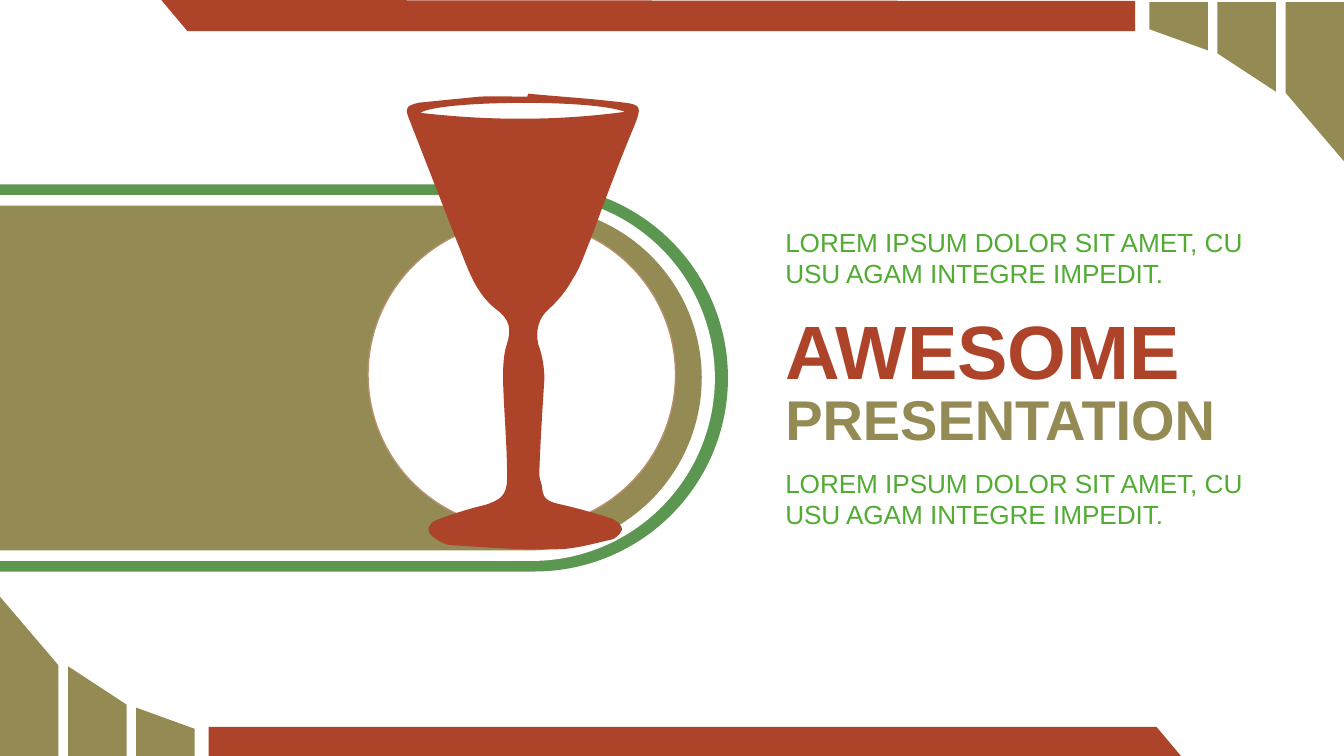
from pptx import Presentation
from pptx.dml.color import RGBColor
from pptx.enum.shapes import MSO_SHAPE as Preset
from pptx.enum.text import MSO_ANCHOR as Anchor, MSO_AUTO_SIZE as AutoSize, PP_ALIGN as Align
from pptx.oxml.ns import qn
from pptx.oxml.xmlchemy import OxmlElement
from pptx.util import Inches, Pt

RED, OLIVE, GREEN, LIME = "AD4329", "948A54", "5C9752", "52AB33"
WHITE, TAN = "FFFFFF", "B7906B"
BLURB = "LOREM IPSUM DOLOR SIT AMET, CU USU AGAM INTEGRE IMPEDIT."
TITLE_ONLY = 5

# Goblet contours: a start point, then two control points and an end point per curve
GOBLET = [
    (5.24, 0.93),
    (5.56, 0.96), (5.88, 0.98), (6.2, 1.02), (6.36, 1.04), (6.36, 1.07), (6.3, 1.23),
    (6.14, 1.61), (6, 1.99), (5.86, 2.37), (5.8, 2.51), (5.76, 2.65), (5.68, 2.77),
    (5.62, 2.88), (5.54, 2.98), (5.44, 3.07), (5.34, 3.16), (5.31, 3.28), (5.34, 3.42),
    (5.38, 3.52), (5.4, 3.65), (5.4, 3.76), (5.38, 4.07), (5.36, 4.38), (5.35, 4.68),
    (5.34, 4.74), (5.38, 4.8), (5.38, 4.86), (5.39, 4.96), (5.46, 4.98), (5.54, 5),
    (5.72, 5.04), (5.9, 5.09), (6.08, 5.15), (6.12, 5.17), (6.17, 5.21), (6.17, 5.25),
    (6.17, 5.28), (6.12, 5.33), (6.08, 5.35), (5.9, 5.39), (5.7, 5.45), (5.52, 5.45),
    (5.17, 5.46), (4.83, 5.43), (4.49, 5.41), (4.43, 5.41), (4.37, 5.38), (4.33, 5.35),
    (4.29, 5.33), (4.25, 5.29), (4.25, 5.25), (4.25, 5.22), (4.29, 5.17), (4.33, 5.16),
    (4.49, 5.1), (4.64, 5.05), (4.81, 5.01), (4.97, 4.96), (5.03, 4.91), (5.03, 4.74),
    (5.03, 4.42), (5, 4.1), (4.99, 3.78), (4.99, 3.67), (4.99, 3.55), (5.02, 3.44),
    (5.08, 3.26), (5.06, 3.17), (4.91, 3.06), (4.7, 2.89), (4.63, 2.63), (4.53, 2.39),
    (4.37, 1.98), (4.21, 1.57), (4.05, 1.16), (4, 1.04), (4.09, 1.04), (4.15, 1.02),
    (4.35, 1), (4.55, 0.98), (4.75, 0.96), (4.91, 0.95), (5.07, 0.96), (5.23, 0.96),
    (5.23, 0.95), (5.23, 0.94), (5.24, 0.93),
]
RIM = [
    (6.2, 1.11),
    (5.86, 0.98), (4.34, 1), (4.17, 1.12), (4.86, 1.2), (5.53, 1.2), (6.2, 1.11),
]


def color(hex_text):
    return RGBColor.from_string(hex_text)


def write(frame, text, size=18, ink=LIME, bold=False, align=Align.LEFT):
    frame.word_wrap = True
    frame.auto_size = AutoSize.NONE
    frame.vertical_anchor = Anchor.MIDDLE
    paragraph = frame.paragraphs[0]
    paragraph.alignment = align
    run = paragraph.add_run()
    run.text = text
    run.font.name = "Arial"
    run.font.size = Pt(size)
    run.font.bold = bold
    run.font.color.rgb = color(ink)


def bend(shape):
    """Turn every three line segments into one cubic curve."""
    lines = list(shape._element.iter(qn("a:lnTo")))
    for first in range(0, len(lines), 3):
        curve = OxmlElement("a:cubicBezTo")
        lines[first].addprevious(curve)
        for line in lines[first:first + 3]:
            curve.append(line[0])
            line.getparent().remove(line)


def half_turn(points):
    return [(13.33 - x, 7.52 - y) for x, y in points]


class Cover:
    text_left, text_width = 7.69, 5.07

    def __init__(self, deck):
        self.slide = deck.slides.add_slide(deck.slide_layouts[TITLE_ONLY])
        self.shapes = self.slide.shapes

    def paint(self, shape, fill, line=None):
        shape.shadow.inherit = False
        shape.fill.solid()
        shape.fill.fore_color.rgb = color(fill)
        if line:
            shape.line.color.rgb = color(line)
            shape.line.width = Pt(1)
        else:
            shape.line.fill.background()

    def outline(self, fill, *contours):
        contours = [[(Inches(x), Inches(y)) for x, y in points] for points in contours]
        builder = self.shapes.build_freeform(*contours[0][0])
        for number, points in enumerate(contours):
            if number:
                builder.move_to(*points[0])
            builder.add_line_segments(points[1:], close=True)
        shape = builder.convert_to_shape()
        self.paint(shape, fill)
        return shape

    def preset(self, kind, left, top, width, height, fill, line=None):
        shape = self.shapes.add_shape(
            kind, Inches(left), Inches(top), Inches(width), Inches(height))
        self.paint(shape, fill, line)
        return shape

    def band(self, length, thickness, fill, middle=3.75):
        """Band from the left slide edge with a round right end."""
        band = self.preset(Preset.ROUND_2_SAME_RECTANGLE, (length - thickness) / 2,
                           middle - length / 2, thickness, length, fill)
        band.adjustments[0] = 0.5
        band.adjustments[1] = 0
        band.rotation = 90

    def title(self, top, height, text, **style):
        title = self.shapes.title
        title.left, title.top = Inches(self.text_left), Inches(top)
        title.width, title.height = Inches(self.text_width), Inches(height)
        write(title.text_frame, text, **style)

    def text(self, top, height, text, **style):
        box = self.shapes.add_textbox(Inches(self.text_left), Inches(top),
                                      Inches(self.text_width), Inches(height))
        write(box.text_frame, text, **style)


def main():
    deck = Presentation()
    deck.slide_width, deck.slide_height = Inches(13.33), Inches(7.5)
    cover = Cover(deck)

    # Corner frames: bottom left, then the same turned to top right
    bar = [(2.07, 7.21), (11.47, 7.21), (11.73, 7.52), (2.07, 7.51)]
    stripes = []
    for column, (high, low) in enumerate([(5.92, 6.6), (6.61, 6.99), (7.02, 7.23)]):
        left = column * 0.675
        right = left + 0.58
        stripes.append([(left, high), (right, low), (right, 7.5), (left, 7.5)])
    for turn in (list, half_turn):
        cover.outline(RED, turn(bar))
        for stripe in reversed(stripes):
            cover.outline(OLIVE, turn(stripe))

    # Wording
    cover.text(4.58, 0.73, BLURB, size=18.67)
    cover.title(2.96, 1.01, "AWESOME", size=54, ink=RED, bold=True, align=Align.JUSTIFY)
    cover.text(3.76, 0.77, "PRESENTATION", size=40, ink=OLIVE, bold=True,
               align=Align.JUSTIFY)
    cover.text(2.19, 0.73, BLURB, size=18.67)

    # Nested bands and disc
    for length, thickness, fill in [(7.22, 3.84, GREEN), (7.09, 3.63, WHITE),
                                    (6.96, 3.42, OLIVE)]:
        cover.band(length, thickness, fill)
    cover.preset(Preset.OVAL, 3.65, 2.19, 3.05, 3.05, WHITE, line=TAN)

    # Goblet with an open rim
    bend(cover.outline(RED, GOBLET, RIM))

    deck.save("out.pptx")


if __name__ == "__main__":
    main()
